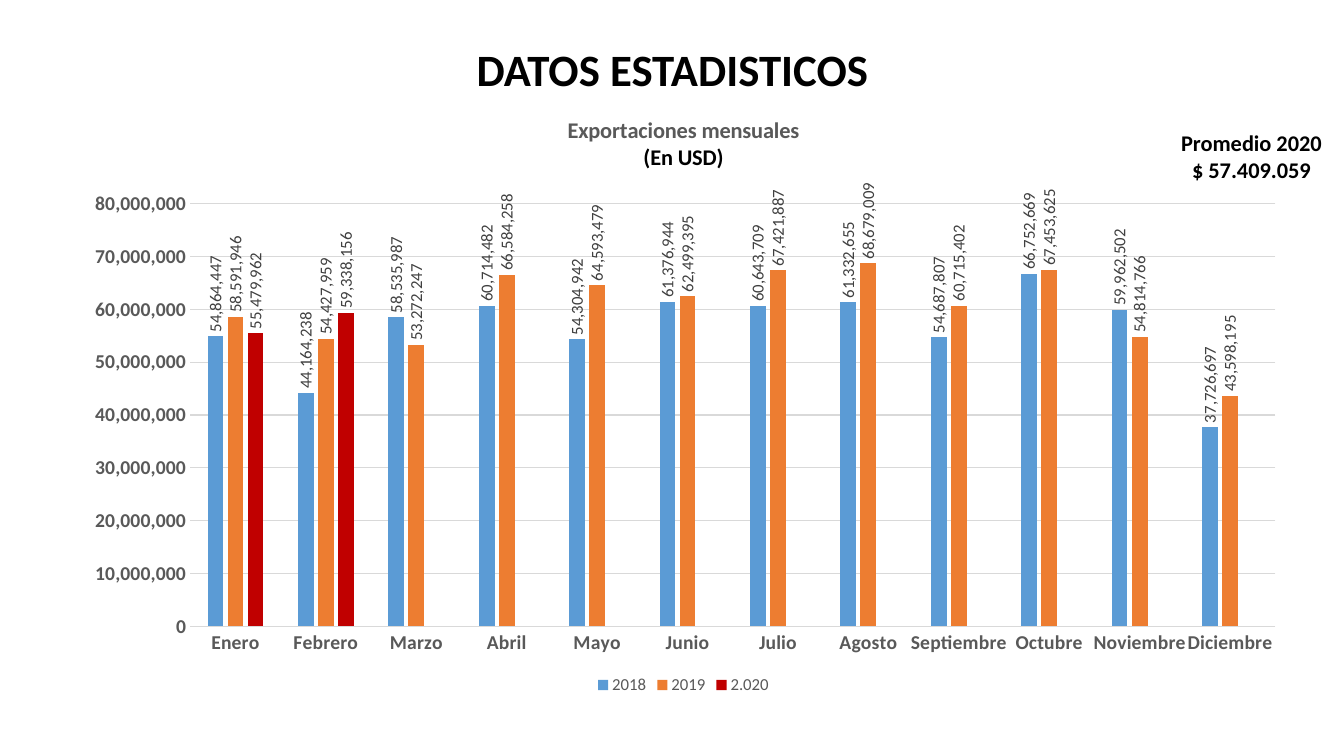
from pptx import Presentation
from pptx.chart.data import CategoryChartData
from pptx.dml.color import RGBColor
from pptx.enum.chart import XL_CHART_TYPE, XL_LABEL_POSITION, XL_LEGEND_POSITION, XL_TICK_MARK
from pptx.enum.text import MSO_ANCHOR, MSO_AUTO_SIZE, PP_ALIGN
from pptx.oxml import parse_xml
from pptx.oxml.ns import nsdecls
from pptx.util import Pt

EMU_PER_PIXEL = 12192000 / 1344
COLORS = {"black": "000000", "axis": "595959", "label": "404040", "grid": "D9D9D9",
          "2018": "5B9BD5", "2019": "ED7D31", "2.020": "C00000"}
MONTHS = ["Enero", "Febrero", "Marzo", "Abril", "Mayo", "Junio", "Julio", "Agosto",
          "Septiembre", "Octubre", "Noviembre", "Diciembre"]
EXPORTS = {
    "2018": [54864447, 44164238, 58535987, 60714482, 54304942, 61376944,
             60643709, 61332655, 54687807, 66752669, 59962502, 37726697],
    "2019": [58591946, 54427959, 53272247, 66584258, 64593479, 62499395,
             67421887, 68679009, 60715402, 67453625, 54814766, 43598195],
    "2.020": [55479962, 59338156] + [None] * 10,
}
PLOT_AREA = {"x": 0.1, "y": 0.18, "w": 0.88, "h": 0.7}
NUMBER_FORMAT = "#,##0"


def px(*lengths):
    return [round(length * EMU_PER_PIXEL) for length in lengths]


def color(name):
    return RGBColor.from_string(COLORS[name])


class SlideBuilder:
    font_name = "Calibri"

    def __init__(self, presentation):
        self.slide = presentation.slides.add_slide(presentation.slide_layouts[5])

    def style(self, font, size, color_name, bold=False):
        font.name = self.font_name
        font.size = Pt(size)
        font.bold = bold
        font.color.rgb = color(color_name)

    def add_lines(self, text_frame, lines, size):
        """Fill a frame with centred bold lines given as (text, colour name)."""
        for index, (text, color_name) in enumerate(lines):
            paragraph = text_frame.add_paragraph() if index else text_frame.paragraphs[0]
            paragraph.alignment = PP_ALIGN.CENTER
            run = paragraph.add_run()
            run.text = text
            self.style(run.font, size, color_name, bold=True)

    def title(self, text, *box):
        shape = self.slide.shapes.title
        shape.left, shape.top, shape.width, shape.height = px(*box)
        shape.text_frame.vertical_anchor = MSO_ANCHOR.MIDDLE
        self.add_lines(shape.text_frame, [(text, "black")], 32)
        shape.text_frame.paragraphs[0].line_spacing = 0.9

    def text(self, lines, *box):
        text_frame = self.slide.shapes.add_textbox(*px(*box)).text_frame
        text_frame.word_wrap = False
        text_frame.auto_size = MSO_AUTO_SIZE.SHAPE_TO_FIT_TEXT
        self.add_lines(text_frame, [(line, "black") for line in lines], 16)

    def column_chart(self, title_lines, categories, values, *box):
        data = CategoryChartData(number_format=NUMBER_FORMAT)
        data.categories = categories
        for name, numbers in values.items():
            data.add_series(name, numbers)
        chart = self.slide.shapes.add_chart(
            XL_CHART_TYPE.COLUMN_CLUSTERED, *px(*box), data).chart
        self.style(chart.font, 10, "black")
        self.add_lines(chart.chart_title.text_frame, title_lines, 16)

        chart.has_legend = True
        chart.legend.position = XL_LEGEND_POSITION.BOTTOM
        chart.legend.include_in_layout = False
        self.style(chart.legend.font, 12, "axis")

        self.axes(chart)
        plot = chart.plots[0]
        plot.gap_width = 219
        plot.overlap = -27
        plot.vary_by_categories = False
        for series in plot.series:
            self.series(series)
        for body in chart.element.xpath(".//c:dLbls/c:txPr/a:bodyPr"):
            body.set("rot", "-5400000")
            body.set("vert", "horz")
        self.place_plot(chart)

    def axes(self, chart):
        for axis in (chart.category_axis, chart.value_axis):
            axis.major_tick_mark = axis.minor_tick_mark = XL_TICK_MARK.NONE
            self.style(axis.tick_labels.font, 14, "axis", bold=True)
        value_axis = chart.value_axis
        value_axis.minimum_scale = 0
        value_axis.maximum_scale = 80_000_000
        value_axis.major_unit = 10_000_000
        value_axis.tick_labels.number_format = NUMBER_FORMAT
        value_axis.tick_labels.number_format_is_linked = False
        value_axis.format.line.fill.background()
        for line in (chart.category_axis.format.line, value_axis.major_gridlines.format.line):
            line.color.rgb = color("grid")
            line.width = Pt(0.75)

    def series(self, series):
        series.invert_if_negative = False
        series.format.fill.solid()
        series.format.fill.fore_color.rgb = color(series.name)
        labels = series.data_labels
        labels.show_value = True
        labels.position = XL_LABEL_POSITION.OUTSIDE_END
        labels.number_format = NUMBER_FORMAT
        labels.number_format_is_linked = False
        self.style(labels.font, 12, "label")

    def place_plot(self, chart):
        """Fix the inner plot area as fractions of the chart."""
        plot_area = chart.element.xpath("c:chart/c:plotArea")[0]
        for layout in plot_area.xpath("c:layout"):
            plot_area.remove(layout)
        modes = '<c:xMode val="edge"/><c:yMode val="edge"/>'
        sizes = "".join(f'<c:{key} val="{value}"/>' for key, value in PLOT_AREA.items())
        plot_area.insert(0, parse_xml(
            f'<c:layout {nsdecls("c")}><c:manualLayout><c:layoutTarget val="inner"/>'
            f'{modes}{sizes}</c:manualLayout></c:layout>'))


def main():
    presentation = Presentation()
    presentation.slide_width, presentation.slide_height = px(1344, 756)
    builder = SlideBuilder(presentation)
    builder.column_chart([("Exportaciones mensuales", "axis"), ("(En USD)", "black")],
                         MONTHS, EXPORTS, 67, 95, 1233, 604)
    builder.title("DATOS ESTADISTICOS", 93, -1, 1159, 146)
    builder.text(["Promedio 2020", "$ 57.409.059"], 1170, 124, 163, 65)
    presentation.save("out.pptx")


if __name__ == "__main__":
    main()
